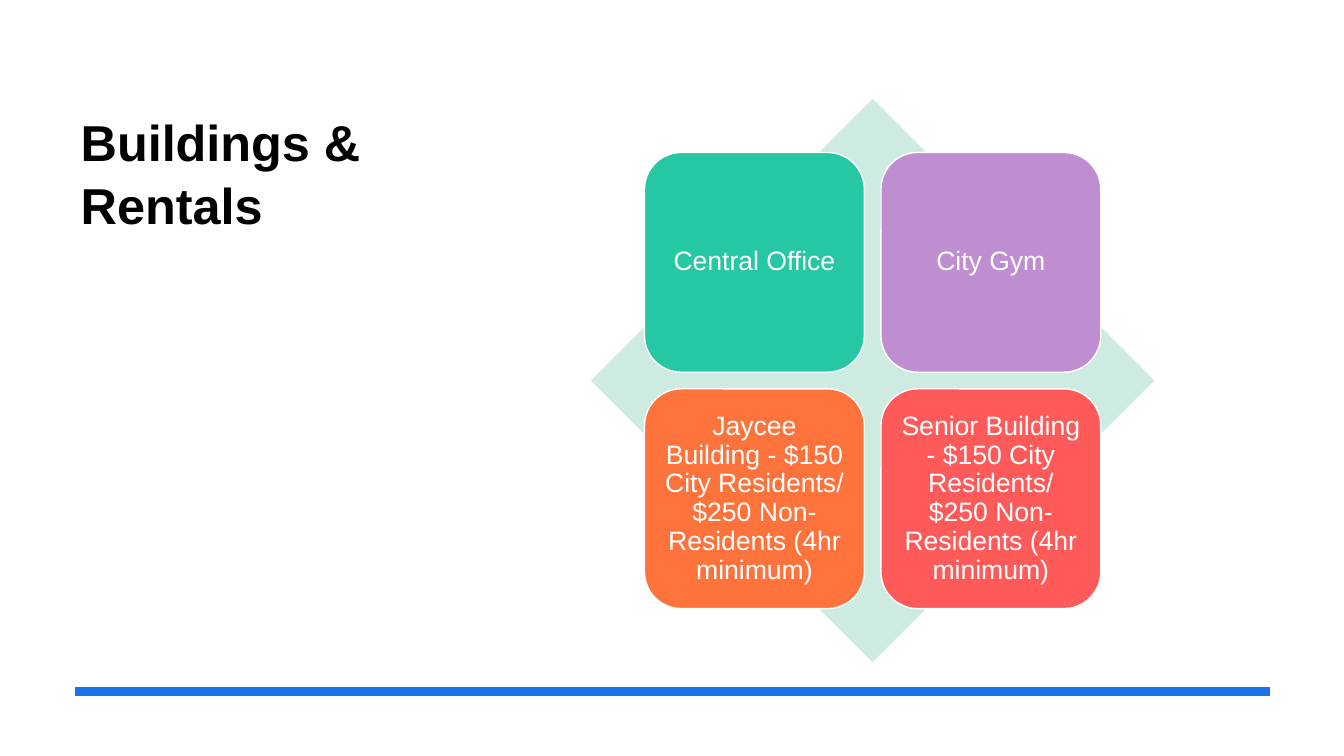
from pptx import Presentation
from pptx.dml.color import RGBColor
from pptx.enum.shapes import MSO_CONNECTOR, MSO_SHAPE
from pptx.enum.text import MSO_ANCHOR, MSO_AUTO_SIZE, PP_ALIGN
from pptx.oxml.ns import qn
from pptx.util import Inches, Pt
from lxml.etree import SubElement

TITLE = "Buildings & Rentals"
RATES = "$150 City Residents/ $250 Non-Residents (4hr minimum)"
BUILDINGS = [
    ("Central Office", "25C8A2"),
    ("City Gym", "BF8ED1"),
    (f"Jaycee Building - {RATES}", "FE733C"),
    (f"Senior Building - {RATES}", "FE5A5A"),
]
TITLE_FONT = {"name": "Arial", "size": Pt(36), "bold": True}
TILE_FONT = {"name": "Arial", "size": Pt(19), "bold": False}

# Matrix geometry in inches: tiles are centred on the diamond
DIAMOND_LEFT, DIAMOND_TOP, DIAMOND_SIZE = 5.86, 0.98, 5.59
TILE_SIZE, TILE_STEP = 2.18, 2.345
COLUMNS = 2


def color(value):
    return RGBColor.from_string(value)


def set_values(target, values):
    for name, value in values.items():
        setattr(target, name, value)


def write(frame, text, font, font_color, spacing):
    para = frame.paragraphs[0]
    para.line_spacing = spacing
    span = para.add_run()
    span.text = text
    set_values(span.font, font)
    span.font.color.rgb = color(font_color)
    return para


def add_block(page, kind, left, top, size, fill):
    block = page.shapes.add_shape(
        kind, Inches(left), Inches(top), Inches(size), Inches(size))
    block.shadow.inherit = False
    block.fill.solid()
    block.fill.fore_color.rgb = color(fill)
    return block


def add_title(page):
    title = page.shapes.title
    set_values(title, {"left": Inches(0.7), "top": Inches(1),
                       "width": Inches(3.28), "height": Inches(4.55)})
    frame = title.text_frame
    set_values(frame, {"word_wrap": True, "auto_size": MSO_AUTO_SIZE.NONE,
                       "vertical_anchor": MSO_ANCHOR.TOP,
                       "margin_top": Inches(0.08)})
    para = write(frame, TITLE, TITLE_FONT, "000000", 1.04)
    para.alignment = PP_ALIGN.LEFT


def add_rule(page):
    rule = page.shapes.add_connector(
        MSO_CONNECTOR.STRAIGHT,
        Inches(0.74), Inches(6.86), Inches(12.6), Inches(6.86))
    rule.line.color.rgb = color("1973EB")
    rule.line.width = Pt(6)
    SubElement(rule.element.spPr, qn("a:effectLst"))


def add_matrix(page):
    diamond = add_block(page, MSO_SHAPE.DIAMOND, DIAMOND_LEFT, DIAMOND_TOP,
                        DIAMOND_SIZE, "CDEBE0")
    diamond.line.fill.background()

    inset = (DIAMOND_SIZE - TILE_STEP - TILE_SIZE) / 2
    for index, (text, fill) in enumerate(BUILDINGS):
        row, column = divmod(index, COLUMNS)
        tile = add_block(page, MSO_SHAPE.ROUNDED_RECTANGLE,
                         DIAMOND_LEFT + inset + column * TILE_STEP,
                         DIAMOND_TOP + inset + row * TILE_STEP,
                         TILE_SIZE, fill)
        tile.line.color.rgb = color("FFFFFF")
        tile.line.width = Pt(1)
        frame = tile.text_frame
        set_values(frame, {"word_wrap": True,
                           "vertical_anchor": MSO_ANCHOR.MIDDLE})
        for side in ("left", "top", "right", "bottom"):
            setattr(frame, f"margin_{side}", Inches(0.08))
        para = write(frame, text, TILE_FONT, "FFFFFF", 0.9)
        para.alignment = PP_ALIGN.CENTER


def main():
    deck = Presentation()
    deck.slide_width, deck.slide_height = Inches(13.33), Inches(7.5)
    page = deck.slides.add_slide(deck.slide_layouts[5])
    page.background.fill.solid()
    page.background.fill.fore_color.rgb = color("FFFFFF")
    add_title(page)
    add_rule(page)
    add_matrix(page)
    deck.save("out.pptx")


if __name__ == "__main__":
    main()
